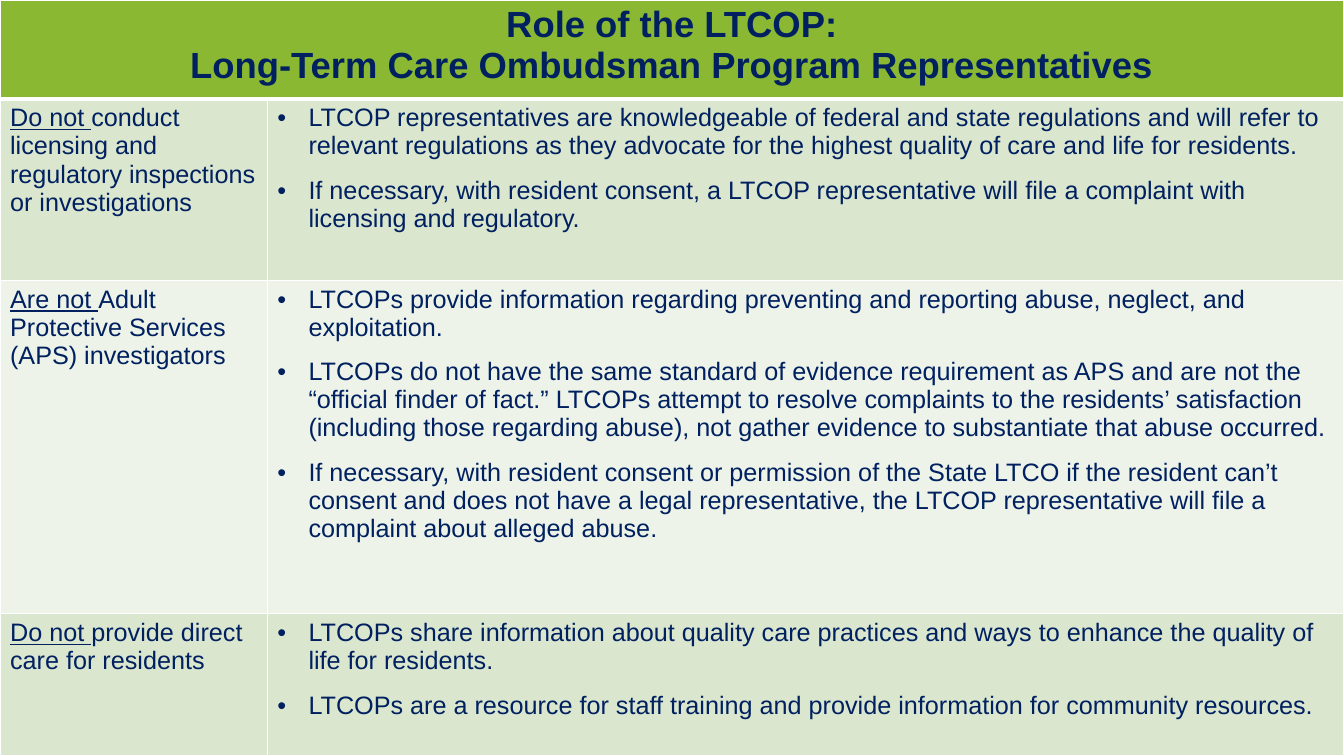
from lxml.etree import SubElement
from pptx import Presentation
from pptx.dml.color import RGBColor as RGB
from pptx.enum.text import PP_ALIGN as Align
from pptx.oxml.ns import qn
from pptx.util import Inches, Pt

COLORS = {"header": "8AB833", "odd": "DAE6CE", "even": "EDF3E8",
          "text": "002060", "border": "FFFFFF"}

HEADING = ["Role of the LTCOP:",
           "Long-Term Care Ombudsman Program Representatives"]
ROLES = [
    ("Do not ", "conduct licensing and regulatory inspections or investigations", [
        "LTCOP representatives are knowledgeable of federal and state regulations and will refer to "
        "relevant regulations as they advocate for the highest quality of care and life for residents.",
        "If necessary, with resident consent, a LTCOP representative will file a complaint with "
        "licensing and regulatory.",
    ]),
    ("Are not ", "Adult Protective Services (APS) investigators", [
        "LTCOPs provide information regarding preventing and reporting abuse, neglect, and exploitation.",
        "LTCOPs do not have the same standard of evidence requirement as APS and are not the "
        "“official finder of fact.” LTCOPs attempt to resolve complaints to the residents’ satisfaction "
        "(including those regarding abuse), not gather evidence to substantiate that abuse occurred.",
        "If necessary, with resident consent or permission of the State LTCO if the resident can’t "
        "consent and does not have a legal representative, the LTCOP representative will file a "
        "complaint about alleged abuse.",
    ]),
    ("Do not ", "provide direct care for residents", [
        "LTCOPs share information about quality care practices and ways to enhance the quality of "
        "life for residents.",
        "LTCOPs are a resource for staff training and provide information for community resources.",
    ]),
]

SLIDE_WIDTH, SLIDE_HEIGHT = 13.33, 7.5
COLUMN_WIDTHS = [2.65, 10.68]
ROW_HEIGHTS = [0.98, 1.8, 3.31, 1.41]
BULLET_INDENT = Inches(0.31)
BULLET_GAP = Pt(11.4)
HEADING_FORMAT = {"name": "Arial", "size": Pt(26), "bold": True}
BODY_FORMAT = {"name": "Arial", "size": Pt(18), "bold": False}


def add_text(paragraph, text, **style):
    run = paragraph.add_run()
    run.text = text
    for key, value in style.items():
        setattr(run.font, key, value)
    run.font.color.rgb = RGB.from_string(COLORS["text"])


def next_paragraph(cell, index):
    frame = cell.text_frame
    return frame.add_paragraph() if index else frame.paragraphs[0]


def add_bullet(paragraph):
    properties = paragraph._p.get_or_add_pPr()
    properties.set("marL", str(BULLET_INDENT))
    properties.set("indent", str(-BULLET_INDENT))
    SubElement(properties, qn("a:buFont"), typeface="Arial")
    SubElement(properties, qn("a:buChar"), char="•")


def dress_cell(cell, fill, top, bottom):
    properties = cell._tc.get_or_add_tcPr()
    for side, width in {"L": 1, "R": 1, "T": top, "B": bottom}.items():
        line = SubElement(properties, qn(f"a:ln{side}"), w=str(Pt(width)))
        SubElement(SubElement(line, qn("a:solidFill")), qn("a:srgbClr"), val=COLORS["border"])
    cell.fill.solid()
    cell.fill.fore_color.rgb = RGB.from_string(COLORS[fill])


def main():
    deck = Presentation()
    deck.slide_width, deck.slide_height = Inches(SLIDE_WIDTH), Inches(SLIDE_HEIGHT)
    slide = deck.slides.add_slide(deck.slide_layouts[6])
    roles_table = slide.shapes.add_table(
        len(ROW_HEIGHTS), len(COLUMN_WIDTHS), 0, 0, deck.slide_width, deck.slide_height).table
    for column, width in zip(roles_table.columns, COLUMN_WIDTHS):
        column.width = Inches(width)
    for row, height in zip(roles_table.rows, ROW_HEIGHTS):
        row.height = Inches(height)

    heading = roles_table.cell(0, 0)
    heading.merge(roles_table.cell(0, 1))
    for index, text in enumerate(HEADING):
        paragraph = next_paragraph(heading, index)
        paragraph.alignment = Align.CENTER
        add_text(paragraph, text, **HEADING_FORMAT)
    for cell in roles_table.rows[0].cells:
        dress_cell(cell, "header", 1, 3)

    for number, (limit, duty, details) in enumerate(ROLES, 1):
        role, explanation = roles_table.rows[number].cells
        paragraph = role.text_frame.paragraphs[0]
        add_text(paragraph, limit, underline=True, **BODY_FORMAT)
        add_text(paragraph, duty, **BODY_FORMAT)
        for index, detail in enumerate(details):
            paragraph = next_paragraph(explanation, index)
            if index:
                paragraph.space_before = BULLET_GAP
            add_bullet(paragraph)
            add_text(paragraph, detail, **BODY_FORMAT)
        for cell in (role, explanation):
            dress_cell(cell, "odd" if number % 2 else "even", 3 if number == 1 else 1, 1)

    deck.save("out.pptx")


if __name__ == "__main__":
    main()
